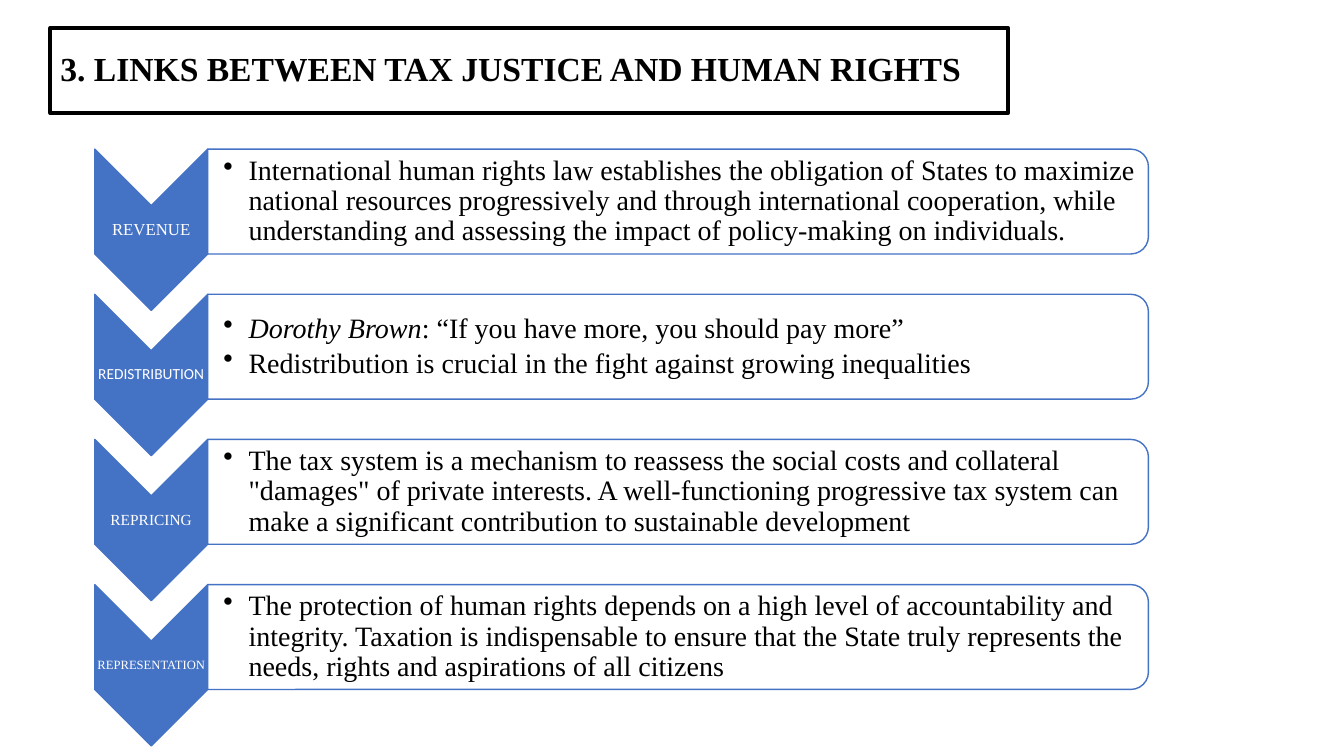
from pptx import Presentation
from pptx.dml.color import RGBColor
from pptx.enum.shapes import MSO_SHAPE
from pptx.enum.text import MSO_ANCHOR, PP_ALIGN
from pptx.oxml.ns import qn
from pptx.util import Inches, Pt
from lxml.etree import SubElement

BLUE = RGBColor(0x44, 0x72, 0xC4)
WHITE = RGBColor(255, 255, 255)
BLACK = RGBColor(0, 0, 0)
SERIF = "Times New Roman"

TITLE = "3. LINKS BETWEEN TAX JUSTICE AND HUMAN RIGHTS"
ROWS = [
    ("REVENUE", 12, SERIF, [[
        ("International human rights law establishes the obligation of States "
         "to maximize national resources progressively and through "
         "international cooperation, while understanding and assessing the "
         "impact of policy-making on individuals.", False)]]),
    ("REDISTRIBUTION", 11, "Calibri", [
        [("Dorothy Brown", True),
         (": “If you have more, you should pay more”", False)],
        [("Redistribution is crucial in the fight against growing "
          "inequalities", False)]]),
    ("REPRICING", 11, SERIF, [[
        ("The tax system is a mechanism to reassess the social costs and "
         "collateral \"damages\" of private interests. A well-functioning "
         "progressive tax system can make a significant contribution to "
         "sustainable development", False)]]),
    ("REPRESENTATION", 9, SERIF, [[
        ("The protection of human rights depends on a high level of "
         "accountability and integrity. Taxation is indispensable to ensure "
         "that the State truly represents the needs, rights and aspirations "
         "of all citizens", False)]]),
]
TOP, STEP = 1.48, 1.44
ARROW_W, ARROW_H = 1.12, 1.6
CARD_W, CARD_H = 9.33, 1.04
ARROW_X = 1.5
CARD_X = ARROW_X + (ARROW_W + CARD_W) / 2

deck = Presentation()
deck.slide_width, deck.slide_height = Inches(13.33), Inches(7.5)
slide = deck.slides.add_slide(deck.slide_layouts[6])


def frame(mid, y, wide, high):
    return [Inches(v) for v in (mid - wide / 2, y - high / 2, wide, high)]


def draw(kind, box, fill, edge, weight):
    shape = slide.shapes.add_shape(kind, *box)
    shape.shadow.inherit = False
    shape.fill.solid()
    shape.fill.fore_color.rgb = fill
    shape.line.color.rgb = edge
    shape.line.width = Pt(weight)
    return shape


def write(shape, paras, size, font, color, align, after=0, bold=None):
    body = shape.text_frame
    body.word_wrap = True
    body.vertical_anchor = MSO_ANCHOR.MIDDLE
    for n, runs in enumerate(paras):
        para = body.add_paragraph() if n else body.paragraphs[0]
        para.alignment = align
        para.line_spacing = 0.9
        para.space_after = Pt(after)
        for text, slant in runs:
            run = para.add_run()
            run.text = text
            run.font.size = Pt(size)
            run.font.name = font
            run.font.color.rgb = color
            run.font.bold = bold
            run.font.italic = slant
    return body


def label(box, left):
    shape = slide.shapes.add_textbox(*box)
    body = shape.text_frame
    body.margin_left = Inches(left)
    body.margin_right = body.margin_top = body.margin_bottom = Inches(0.01)
    return shape


def bullet(para):
    props = para._p.get_or_add_pPr()
    props.set("marL", str(Inches(0.25)))
    props.set("indent", str(-Inches(0.25)))
    SubElement(props, qn("a:buChar")).set("char", "•")


head = draw(MSO_SHAPE.RECTANGLE, frame(5.25, 0.7, 9.5, 0.84), WHITE, BLACK, 3)
write(head, [[(TITLE, False)]], 24, SERIF, BLACK, PP_ALIGN.LEFT, bold=True)

for i, (name, size, font, points) in enumerate(ROWS):
    top = TOP + i * STEP
    mid = top + ARROW_H / 2
    arrow = draw(MSO_SHAPE.CHEVRON, frame(ARROW_X, mid, ARROW_H, ARROW_W),
                 BLUE, BLUE, 1)
    arrow.rotation = 90
    tag = label(frame(ARROW_X, mid, ARROW_W, 0.48), 0.01)
    write(tag, [[(name, False)]], size, font, WHITE, PP_ALIGN.CENTER,
          size * 0.35)

    mid = top + CARD_H / 2
    card = draw(MSO_SHAPE.ROUND_2_SAME_RECTANGLE,
                frame(CARD_X, mid, CARD_H, CARD_W), WHITE, BLUE, 1)
    card.rotation = 90
    tint = card.fill._xPr.find(qn("a:solidFill"))[0]
    SubElement(tint, qn("a:alpha")).set("val", "90000")
    note = label(frame(CARD_X - 0.03, mid, CARD_W - 0.05, 0.94), 0.16)
    body = write(note, points, 20, SERIF, BLACK, PP_ALIGN.LEFT, 3)
    for para in body.paragraphs:
        bullet(para)

deck.save("out.pptx")
